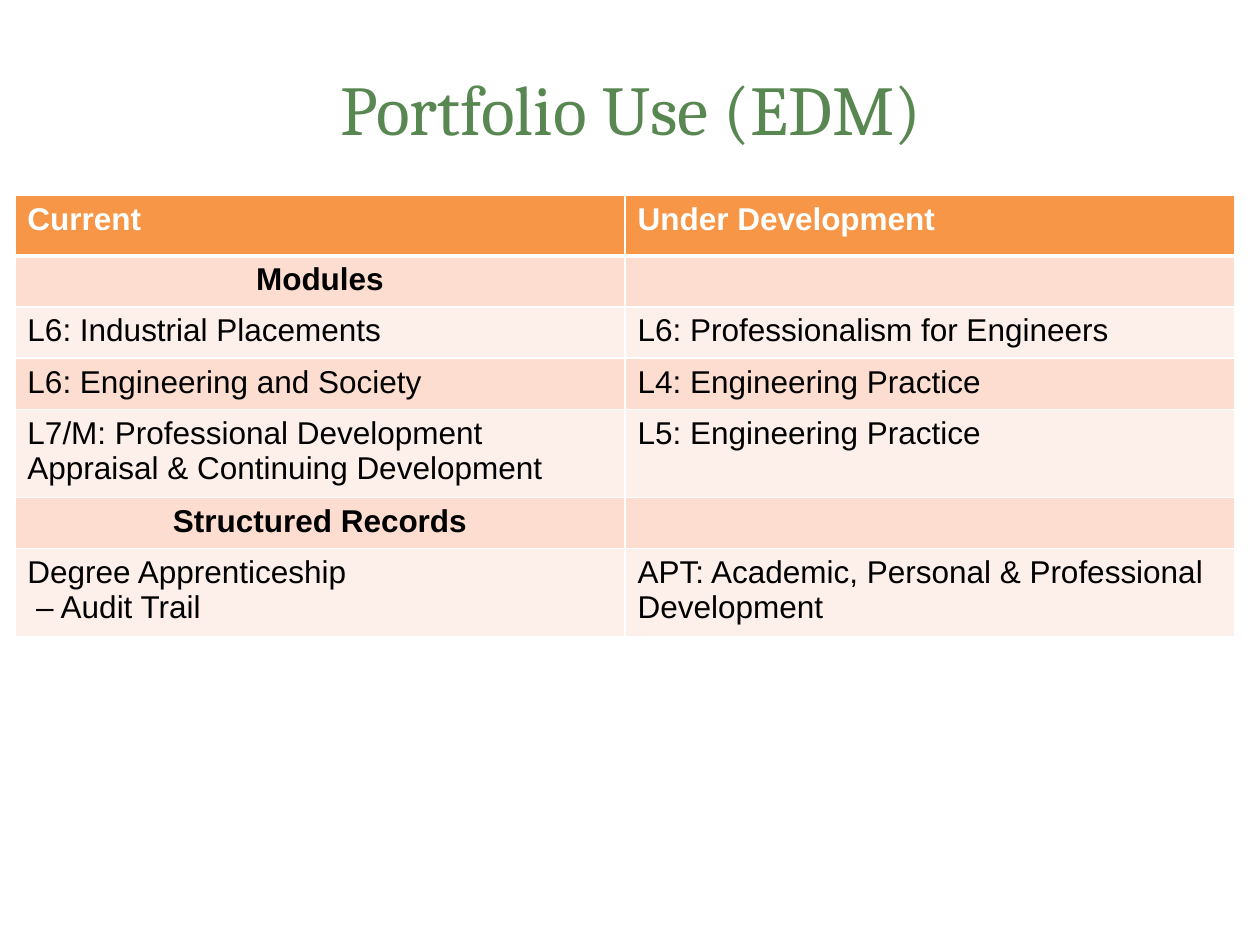
from dataclasses import dataclass
from typing import Any

from lxml import etree
from pptx import Presentation
from pptx import util as u
from pptx.dml.color import RGBColor
from pptx.enum import text
from pptx.oxml import ns

COLOURS = {
    "title": "598752",
    "header": "F79646",
    "band_dark": "FCDDCF",
    "band_light": "FDEFE9",
    "white": "FFFFFF",
    "black": "000000",
}

HEADERS = ["Current", "Under Development"]
SECTIONS = {"Modules", "Structured Records"}
ROWS = [
    HEADERS,
    ["Modules", ""],
    ["L6: Industrial Placements", "L6: Professionalism for Engineers"],
    ["L6: Engineering and Society", "L4: Engineering Practice"],
    ["L7/M: Professional Development Appraisal & Continuing Development",
     "L5: Engineering Practice"],
    ["Structured Records", ""],
    ["Degree Apprenticeship\n – Audit Trail",
     "APT: Academic, Personal & Professional Development"],
]


@dataclass
class SlideBuilder:
    """Hold the style and the current slide, and add each kind of element."""

    slide: Any
    title_font: str = "Cambria"
    body_font: str = "Arial"
    title_size: int = 40
    body_size: int = 18

    def style(self, font, name, size, colour, bold=False):
        font.name = name
        font.size = u.Pt(size)
        font.bold = bold
        font.color.rgb = RGBColor.from_string(COLOURS[colour])

    def add_title(self, wording, left, top, width, height):
        shape = self.slide.shapes.add_textbox(
            u.Cm(left), u.Cm(top), u.Cm(width), u.Cm(height))
        frame = shape.text_frame
        frame.word_wrap = True
        frame.vertical_anchor = text.MSO_ANCHOR.MIDDLE
        frame.margin_left = frame.margin_right = 0
        frame.margin_top = frame.margin_bottom = 0
        paragraph = frame.paragraphs[0]
        paragraph.alignment = text.PP_ALIGN.CENTER
        paragraph.line_spacing = u.Pt(42)
        run = paragraph.add_run()
        run.text = wording
        self.style(run.font, self.title_font, self.title_size, "title")

    def add_borders(self, cell, bottom_width):
        properties = cell._tc.get_or_add_tcPr()
        widths = {"lnL": 1, "lnR": 1, "lnT": 1, "lnB": bottom_width}
        for side, width in widths.items():
            line = etree.SubElement(
                properties, ns.qn(f"a:{side}"), w=str(u.Pt(width)))
            fill = etree.SubElement(line, ns.qn("a:solidFill"))
            etree.SubElement(fill, ns.qn("a:srgbClr"), val=COLOURS["white"])

    def fill_cell(self, cell, wording, fill, colour, bold, alignment, bottom_width):
        self.add_borders(cell, bottom_width)
        cell.fill.solid()
        cell.fill.fore_color.rgb = RGBColor.from_string(COLOURS[fill])
        frame = cell.text_frame
        for index, line in enumerate(wording.split("\n")):
            paragraph = frame.add_paragraph() if index else frame.paragraphs[0]
            paragraph.alignment = alignment
            paragraph.font.size = u.Pt(self.body_size)
            if line:
                run = paragraph.add_run()
                run.text = line
                self.style(run.font, self.body_font, self.body_size, colour, bold)

    def add_table(self, rows, left, top, column_width, header_height, row_height):
        columns = len(rows[0])
        height = header_height + row_height * (len(rows) - 1)
        table = self.slide.shapes.add_table(
            len(rows), columns, u.Cm(left), u.Cm(top),
            u.Cm(column_width * columns), u.Cm(height)).table
        for column in table.columns:
            column.width = u.Cm(column_width)
        for index, row in enumerate(rows):
            header = index == 0
            table.rows[index].height = u.Cm(header_height if header else row_height)
            band = "band_dark" if index % 2 else "band_light"
            for cell, wording in zip(table.rows[index].cells, row):
                section = wording in SECTIONS
                self.fill_cell(
                    cell, wording,
                    fill="header" if header else band,
                    colour="white" if header else "black",
                    bold=header or section,
                    alignment=text.PP_ALIGN.CENTER if section else text.PP_ALIGN.LEFT,
                    bottom_width=3 if header else 1)


def main():
    presentation = Presentation()
    presentation.slide_width = u.Cm(25.4)
    presentation.slide_height = u.Cm(19.05)
    builder = SlideBuilder(presentation.slides.add_slide(presentation.slide_layouts[6]))
    builder.add_title("Portfolio Use (EDM)", 3.66, 1.37, 18.11, 1.8)
    builder.add_table(ROWS, 0.3, 3.94, 12.3, 1.22, 1.03)
    presentation.save("out.pptx")


if __name__ == "__main__":
    main()
